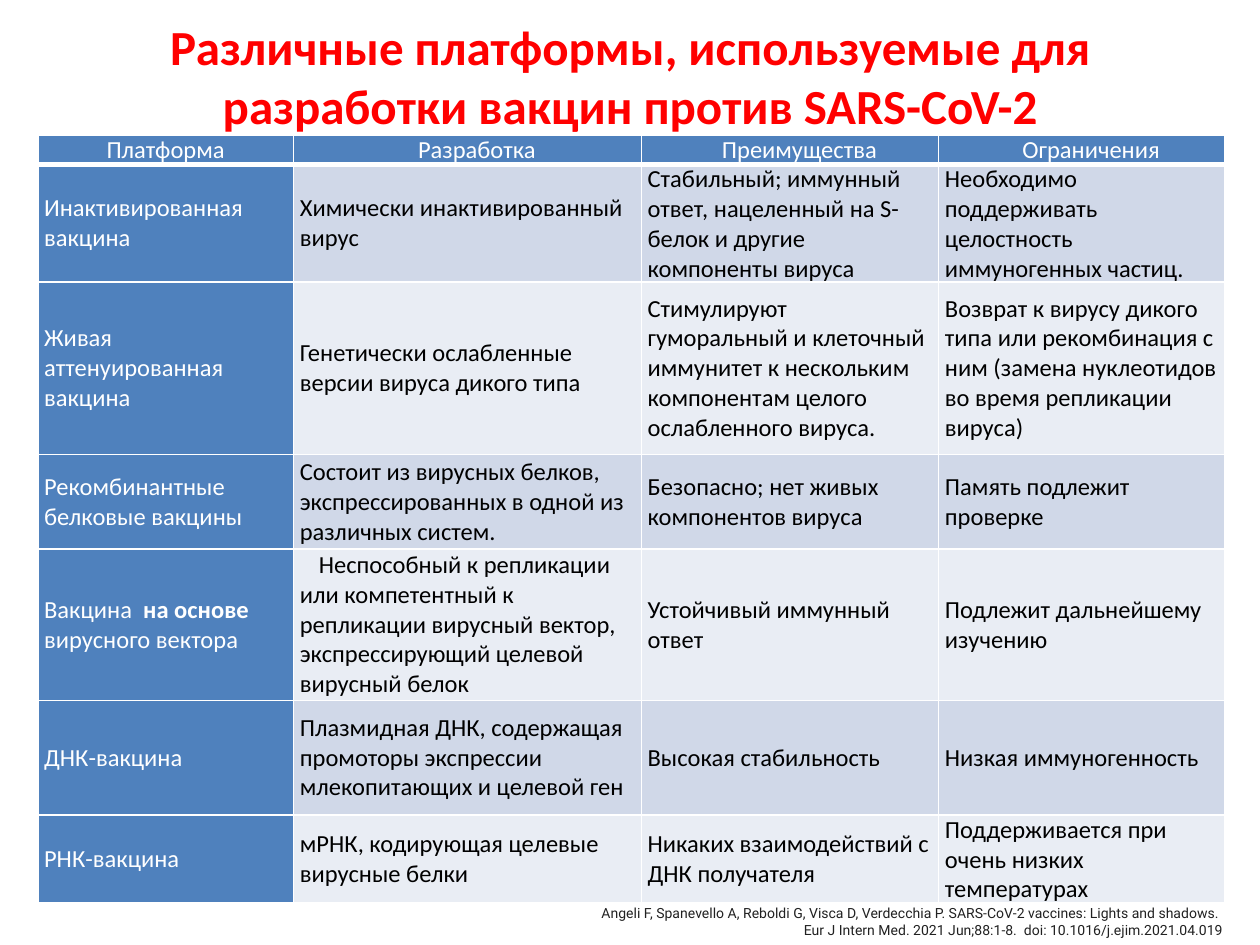
from lxml import etree
from pptx import Presentation
from pptx.dml.color import RGBColor
from pptx.enum.text import MSO_ANCHOR, PP_ALIGN
from pptx.oxml.ns import qn
from pptx.util import Inches, Pt

CENTER, LEFT, RIGHT = PP_ALIGN.CENTER, PP_ALIGN.LEFT, PP_ALIGN.RIGHT
MIDDLE, TOP = MSO_ANCHOR.MIDDLE, MSO_ANCHOR.TOP

WHITE, BLACK, RED, GREY = "FFFFFF", "000000", "FF0000", "212121"
BLUE, BANDS = "4F81BD", ("D0D8E8", "E9EDF4")

TITLE = "Различные платформы, используемые для разработки вакцин против SARS-CoV-2"
SOURCE = [
    "Angeli F, Spanevello A, Reboldi G, Visca D, Verdecchia P. SARS-CoV-2 vaccines: Lights and shadows. ",
    "Eur J Intern Med. 2021 Jun;88:1-8.  doi: 10.1016/j.ejim.2021.04.019",
]
COL_WIDTHS = [2.03, 2.76, 2.36, 2.27]
ROW_HEIGHTS = [0.23, 0.91, 1.37, 0.75, 1.2, 0.91, 0.68]
FIRST_LINE = 0.15
INDENTED = {(0, 1), (0, 2), (0, 3), (4, 1)}
# A cell is a string, or a list of (text, format) runs
VECTOR_VACCINE = [
    ("Вакцина  ", {}),
    ("на основе ", {"bold": True}),
    (" ", {"size": Pt(11)}),
    ("вирусного вектора", {}),
]
ROWS = [
    ["Платформа", "Разработка", "Преимущества", "Ограничения"],
    ["Инактивированная вакцина",
     "Химически инактивированный вирус",
     "Стабильный; иммунный ответ, нацеленный на S-белок и другие компоненты вируса",
     "Необходимо поддерживать целостность иммуногенных частиц."],
    ["Живая аттенуированная вакцина",
     "Генетически ослабленные версии вируса дикого типа",
     "Стимулируют гуморальный и клеточный иммунитет к нескольким компонентам целого ослабленного вируса.",
     "Возврат к вирусу дикого типа или рекомбинация с ним (замена нуклеотидов во время репликации вируса)"],
    ["Рекомбинантные белковые вакцины",
     "Состоит из вирусных белков, экспрессированных в одной из различных систем.",
     "Безопасно; нет живых компонентов вируса",
     "Память подлежит проверке"],
    [VECTOR_VACCINE,
     "Неспособный к репликации или компетентный к репликации вирусный вектор, "
     "экспрессирующий целевой вирусный белок",
     "Устойчивый иммунный ответ",
     "Подлежит дальнейшему изучению"],
    ["ДНК-вакцина",
     "Плазмидная ДНК, содержащая промоторы экспрессии млекопитающих и целевой ген",
     "Высокая стабильность",
     "Низкая иммуногенность"],
    ["РНК-вакцина",
     "мРНК, кодирующая целевые вирусные белки",
     "Никаких взаимодействий с ДНК получателя",
     "Поддерживается при очень низких температурах"],
]


def rgb(color):
    return RGBColor.from_string(color)


def add_run(p, text, color, **font):
    r = p.add_run()
    r.text = text
    r.font.color.rgb = rgb(color)
    for name, value in font.items():
        setattr(r.font, name, value)


def add_text(slide, box, lines, align, anchor, color, **font):
    tf = slide.shapes.add_textbox(*map(Inches, box)).text_frame
    tf.word_wrap = True
    tf.vertical_anchor = anchor
    for i, line in enumerate(lines):
        p = tf.add_paragraph() if i else tf.paragraphs[0]
        p.alignment = align
        add_run(p, line, color, **font)


def set_borders(cell, bottom):
    """Draw white edges; must run before the fill, which follows them in the XML."""
    tc_pr = cell._tc.get_or_add_tcPr()
    for side, width in (("L", 1), ("R", 1), ("T", 1), ("B", bottom)):
        ln = etree.SubElement(tc_pr, qn(f"a:ln{side}"), w=str(Pt(width)))
        fill = etree.SubElement(ln, qn("a:solidFill"))
        etree.SubElement(fill, qn("a:srgbClr"), val=WHITE)


def fill_cell(cell, row, col, content):
    header = row == 0
    on_blue = header or col == 0
    set_borders(cell, bottom=3 if header else 1)
    cell.fill.solid()
    cell.fill.fore_color.rgb = rgb(BLUE if on_blue else BANDS[(row - 1) % 2])
    layout = {
        "vertical_anchor": MIDDLE,
        "margin_left": Inches(0.05), "margin_right": Inches(0.05),
        "margin_top": 0, "margin_bottom": 0,
    }
    for name, value in layout.items():
        setattr(cell, name, value)
    p = cell.text_frame.paragraphs[0]
    p.alignment = CENTER if header else LEFT
    if (row, col) in INDENTED:
        p._p.get_or_add_pPr().set("indent", str(Inches(FIRST_LINE)))
    runs = [(content, {})] if isinstance(content, str) else content
    base = {"name": "Calibri", "size": Pt(14), "bold": False}
    for text, extra in runs:
        add_run(p, text, WHITE if on_blue else BLACK, **{**base, **extra})


def add_platform_table(slide):
    box = (0.3, 1.07, sum(COL_WIDTHS), sum(ROW_HEIGHTS))
    table = slide.shapes.add_table(len(ROWS), len(COL_WIDTHS), *map(Inches, box)).table
    for column, width in zip(table.columns, COL_WIDTHS):
        column.width = Inches(width)
    for row, height in zip(table.rows, ROW_HEIGHTS):
        row.height = Inches(height)
    for i, row in enumerate(ROWS):
        for j, content in enumerate(row):
            fill_cell(table.cell(i, j), i, j, content)


def main():
    prs = Presentation()
    prs.slide_width, prs.slide_height = Inches(10), Inches(7.5)
    slide = prs.slides.add_slide(prs.slide_layouts[6])
    add_text(slide, (0.5, -0.03, 9, 1.25), [TITLE], CENTER, MIDDLE, RED,
             name="Calibri", size=Pt(28), bold=True)
    add_platform_table(slide)
    add_text(slide, (2.09, 7.13, 7.72, 0.37), SOURCE, RIGHT, TOP, GREY,
             name="Roboto", size=Pt(8))
    prs.save("out.pptx")


if __name__ == "__main__":
    main()
